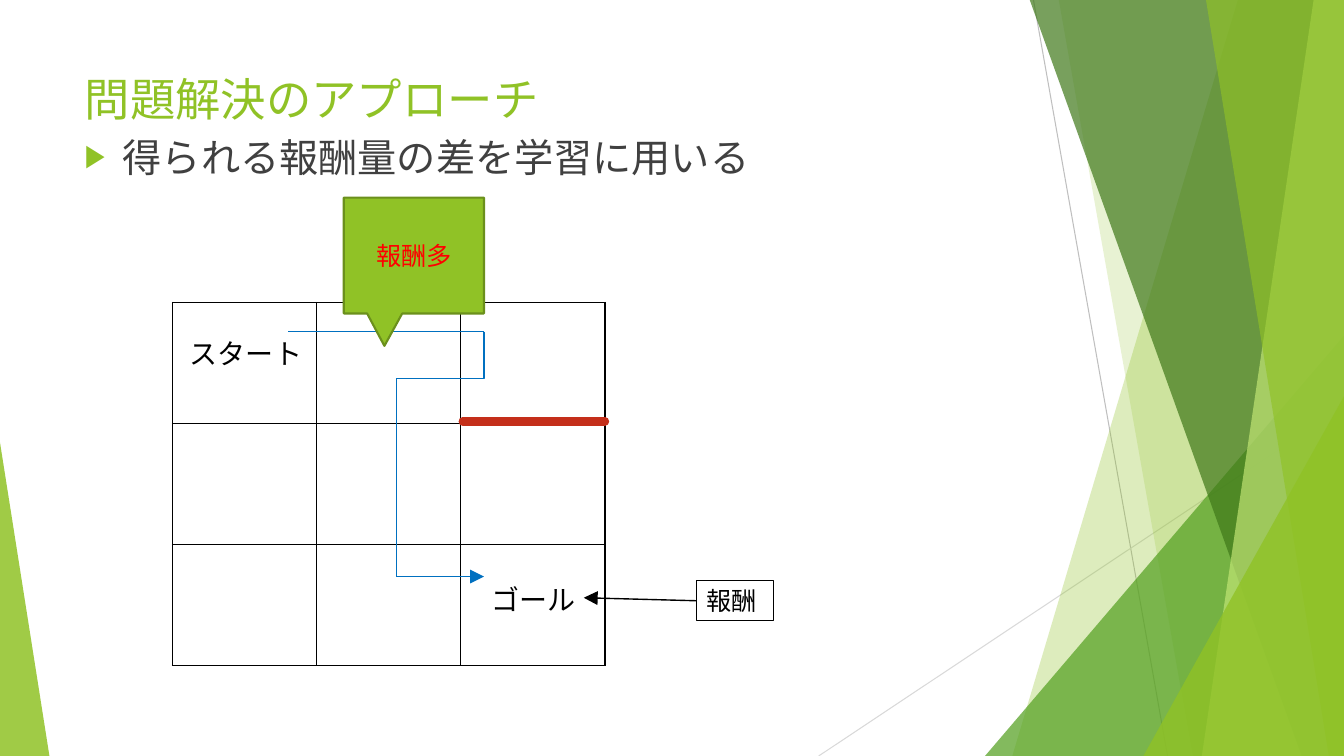
from lxml.etree import SubElement
from pptx import Presentation
from pptx.dml.color import RGBColor
from pptx.enum.shapes import MSO_CONNECTOR, MSO_SHAPE
from pptx.enum.text import MSO_ANCHOR, MSO_AUTO_SIZE, PP_ALIGN
from pptx.oxml.ns import qn
from pptx.util import Pt

PX = 9144
FONT = "Karla"
GREEN, BLUE, RED, BLACK = "90C226", "0070C0", "C42F1A", "000000"


def px(*lengths):
    return [length * PX for length in lengths]


def color(target, value):
    target.rgb = RGBColor.from_string(value)


def paint(shape, fill=None, alpha=100, line=None, width=1):
    shape.shadow.inherit = False
    if fill:
        shape.fill.solid()
        color(shape.fill.fore_color, fill)
        if alpha < 100:
            tint = shape._element.spPr.find(qn("a:solidFill"))[0]
            SubElement(tint, qn("a:alpha"), val=str(alpha * 1000))
    else:
        shape.fill.background()
    if line:
        color(shape.line.color, line)
        shape.line.width = Pt(width)
    else:
        shape.line.fill.background()


def write(shape, text, size, ink, align=PP_ALIGN.LEFT, anchor=MSO_ANCHOR.TOP, wrap=True):
    frame = shape.text_frame
    frame.word_wrap = wrap
    frame.auto_size = MSO_AUTO_SIZE.NONE
    frame.vertical_anchor = anchor
    para = frame.paragraphs[0]
    para.alignment = align
    span = para.add_run()
    span.text = text
    span.font.name = FONT
    span.font.size = Pt(size)
    color(span.font.color, ink)
    return para


def connect(page, start, end, ink, width=1, kind=MSO_CONNECTOR.STRAIGHT, arrow=False, cap=None):
    line = page.shapes.add_connector(kind, *px(*start, *end))
    color(line.line.color, ink)
    line.line.width = Pt(width)
    outline = line.line._get_or_add_ln()
    if arrow:
        SubElement(outline, qn("a:tailEnd"), type="triangle", w="lg", len="lg")
    if cap:
        outline.set("cap", cap)
    SubElement(line._element.spPr, qn("a:effectLst"))
    return line


def add_facets(page, box):
    left, top, width, height = box
    right, bottom = left + width, top + height

    def band(upper, lower, fill, alpha):
        builder = page.shapes.build_freeform(upper, top - 1, scale=PX)
        builder.add_line_segments([(right, top - 1), (right, bottom), (lower, bottom)])
        paint(builder.convert_to_shape(), fill, alpha)

    def wedge(edge, wide, tall, tip, fill, alpha):
        shape = page.shapes.add_shape(
            MSO_SHAPE.ISOSCELES_TRIANGLE, *px(edge, bottom - tall, wide, tall))
        shape.adjustments[0] = tip
        paint(shape, fill, alpha)

    connect(page, (right - 308, top), (right - 175, bottom), "BFBFBF", 0.75)
    connect(page, (right, top + 403), (right - 521, bottom), "D9D9D9", 0.75)
    band(right - 105, right - 329, GREEN, 30)
    band(right - 283, right - 150, GREEN, 20)
    wedge(right - 356, 356, 417, 1, "54A021", 72)
    band(right - 312, right - 42, "3F7819", 70)
    band(right - 30, right - 141, "C0E474", 70)
    band(right - 137, right - 15, GREEN, 65)
    wedge(right - 199, 199, 357, 1, GREEN, 80)
    wedge(left, 49, 311, 0, GREEN, 85)


def add_heading(page, box):
    left, top, width, height = box
    title = page.shapes.title
    title.left, title.top, title.width, title.height = px(left, top, width, 61)
    write(title, "問題解決のアプローチ", 32.4, GREEN, anchor=MSO_ANCHOR.MIDDLE)

    body = page.shapes.add_textbox(*px(left, top + 60, width, height - 60))
    para = write(body, "得られる報酬量の差を学習に用いる", 28, "404040")
    para.space_before = Pt(10)
    properties = para._p.get_or_add_pPr()
    properties.set("marL", str(38 * PX))
    properties.set("indent", str(-38 * PX))
    tint = SubElement(properties, qn("a:buClr"))
    SubElement(tint, qn("a:srgbClr"), val=GREEN)
    SubElement(properties, qn("a:buSzPct"), val="80000")
    SubElement(properties, qn("a:buFont"), typeface=FONT)
    SubElement(properties, qn("a:buChar"), char="▶")


def border(cell):
    cell.fill.background()
    properties = cell._tc.get_or_add_tcPr()
    for index, side in enumerate(("lnL", "lnR", "lnT", "lnB")):
        edge = SubElement(properties, qn(f"a:{side}"), w=str(Pt(1)))
        solid = SubElement(edge, qn("a:solidFill"))
        SubElement(solid, qn("a:srgbClr"), val=BLACK)
        properties.insert(index, edge)


def add_grid(page, box):
    grid = page.shapes.add_table(3, 3, *px(*box)).table
    grid.first_row = grid.horz_banding = False
    for column in grid.columns:
        column.width = box[2] // 3 * PX
    for row in grid.rows:
        row.height = box[3] // 3 * PX
    for cell in grid.iter_cells():
        border(cell)


def add_route(page, left, top):
    turn, lane, finish = left + 309, left + 222, top + 272
    connect(page, (left + 115, top + 29), (turn, top + 29), BLUE)
    drop, shift = finish - top - 29, turn - lane
    middle_x, middle_y = (turn + lane) // 2, top + 29 + drop // 2
    start = (middle_x - drop // 2, middle_y - shift // 2)
    bend = connect(page, start, (start[0] + drop, start[1] + shift), BLUE,
                   kind=MSO_CONNECTOR.ELBOW)
    bend._element.spPr.find(qn("a:xfrm")).set("rot", "5400000")
    geometry = bend._element.spPr.find(qn("a:prstGeom"))
    SubElement(geometry.find(qn("a:avLst")), qn("a:gd"), name="adj1", fmla="val 19100")
    connect(page, (lane, finish), (turn, finish), BLUE, arrow=True)


def add_maze(page, box):
    left, top, width, height = box
    add_grid(page, box)
    for text, x, y, wide in (("スタート", 7, 29, 132), ("ゴール", 306, 273, 104)):
        label = page.shapes.add_textbox(*px(left + x, top + y, wide, 44))
        write(label, text, 20, BLACK, PP_ALIGN.CENTER, wrap=False)
    connect(page, (left + width * 2 // 3 + 2, top + 118), (left + width, top + 118),
            RED, 6, cap="rnd")
    add_route(page, left, top)

    callout = page.shapes.add_shape(
        MSO_SHAPE.RECTANGULAR_CALLOUT, *px(left + 170, top - 104, 139, 115))
    callout.adjustments[0], callout.adjustments[1] = -0.21, 0.78
    paint(callout, GREEN, line="6B901C", width=1.5)
    write(callout, "報酬多", 18, "FF0000", PP_ALIGN.CENTER, MSO_ANCHOR.MIDDLE)

    reward = page.shapes.add_shape(MSO_SHAPE.RECTANGLE, *px(left + 520, top + 276, 76, 40))
    paint(reward, line=BLACK, width=0.75)
    write(reward, "報酬", 18, BLACK)
    pointer = connect(page, (left + 520, top + 296), (left + 408, top + 293), BLACK, arrow=True)
    pointer.begin_connect(reward, 1)


def main():
    deck = Presentation()
    deck.slide_width, deck.slide_height = px(1333, 750)
    page = deck.slides.add_slide(deck.slide_layouts[5])
    add_facets(page, (0, 0, 1333, 750))
    add_heading(page, (74, 67, 940, 593))
    add_maze(page, (171, 300, 429, 360))
    deck.save("out.pptx")


if __name__ == "__main__":
    main()
